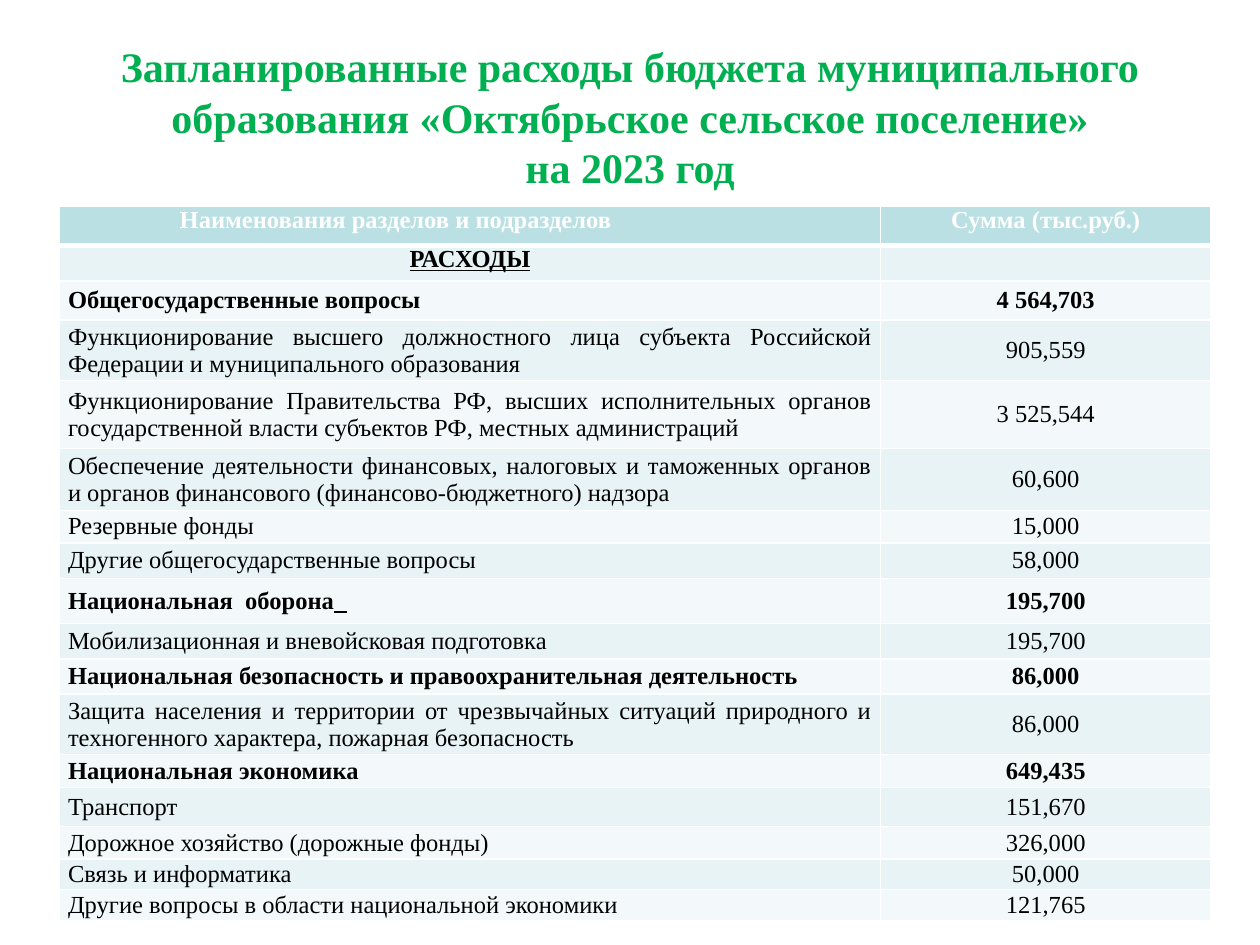
from lxml.etree import SubElement
from pptx import Presentation
from pptx.dml.color import RGBColor
from pptx.enum.text import MSO_ANCHOR, PP_ALIGN
from pptx.oxml.ns import qn
from pptx.util import Inches, Pt

FONT = "Times New Roman"
TITLE = ("Запланированные расходы бюджета муниципального образования "
         "«Октябрьское сельское поселение»", "на 2023 год")
HEADINGS = ("Наименования разделов и подразделов", "Сумма (тыс.руб.)")
GROUP = "РАСХОДЫ"
# name, amount, row height, is a section
EXPENSES = [
    ("Общегосударственные вопросы", "4 564,703", 0.31, True),
    ("Функционирование высшего должностного лица субъекта Российской "
     "Федерации и муниципального образования", "905,559", 0.48, False),
    ("Функционирование Правительства РФ, высших исполнительных органов "
     "государственной власти субъектов РФ, местных администраций",
     "3 525,544", 0.54, False),
    ("Обеспечение деятельности финансовых, налоговых и таможенных органов "
     "и органов финансового (финансово-бюджетного) надзора",
     "60,600", 0.49, False),
    ("Резервные фонды", "15,000", 0.26, False),
    ("Другие общегосударственные вопросы", "58,000", 0.28, False),
    ("Национальная  оборона", "195,700", 0.36, True),
    ("Мобилизационная и вневойсковая подготовка", "195,700", 0.28, False),
    ("Национальная безопасность и правоохранительная деятельность",
     "86,000", 0.28, True),
    ("Защита населения и территории от чрезвычайных ситуаций природного и "
     "техногенного характера, пожарная безопасность", "86,000", 0.48, False),
    ("Национальная экономика", "649,435", 0.26, True),
    ("Транспорт", "151,670", 0.31, False),
    ("Дорожное хозяйство (дорожные фонды)", "326,000", 0.26, False),
    ("Связь и информатика", "50,000", 0.24, False),
    ("Другие вопросы в области национальной экономики", "121,765", 0.25, False),
]
DEFENCE = "Национальная  оборона"
COLUMN_WIDTHS = (6.52, 2.62)
HEADER_HEIGHT, GROUP_HEIGHT = 0.31, 0.24
HEADER_FILL, BAND_FILLS = "BBE0E3", ("E7F3F4", "F3F9FA")


def color(value):
    return RGBColor.from_string(value)


def add_span(para, text, size, ink, bold=False):
    span = para.add_run()
    span.text = text
    span.font.name = FONT
    span.font.size = Pt(size)
    span.font.bold = bold
    span.font.color.rgb = color(ink)
    return span


def set_borders(cell, bottom_width):
    """Draw white lines on all four sides; call before the fill is set."""
    properties = cell._tc.get_or_add_tcPr()
    for side, width in (("L", 1), ("R", 1), ("T", 1), ("B", bottom_width)):
        line = SubElement(properties, qn(f"a:ln{side}"), w=str(Pt(width)))
        fill = SubElement(line, qn("a:solidFill"))
        SubElement(fill, qn("a:srgbClr"), val="FFFFFF")


def fill_cell(cell, text, fill, align=PP_ALIGN.CENTER, ink="000000",
              bold=True, inset=0.07, anchor=MSO_ANCHOR.MIDDLE, bottom_width=1):
    set_borders(cell, bottom_width)
    cell.fill.solid()
    cell.fill.fore_color.rgb = color(fill)
    cell.margin_left = cell.margin_right = Inches(inset)
    cell.margin_top = cell.margin_bottom = 0
    cell.vertical_anchor = anchor
    para = cell.text_frame.paragraphs[0]
    para.alignment = align
    return add_span(para, text, 14, ink, bold)


deck = Presentation()
deck.slide_width, deck.slide_height = Inches(10), Inches(7.5)
page = deck.slides.add_slide(deck.slide_layouts[5])

title = page.shapes.title
title.left, title.top = Inches(0.5), Inches(0.3)
title.width, title.height = Inches(9), Inches(1.25)
title.text_frame.vertical_anchor = MSO_ANCHOR.MIDDLE
title_para = title.text_frame.paragraphs[0]
title_para.alignment = PP_ALIGN.CENTER
add_span(title_para, TITLE[0], 24, "00B050", True)
title_para.add_line_break()
add_span(title_para, TITLE[1], 24, "00B050", True)

heights = [HEADER_HEIGHT, GROUP_HEIGHT] + [expense[2] for expense in EXPENSES]
table = page.shapes.add_table(
    len(heights), 2, Inches(0.47), Inches(1.64),
    Inches(sum(COLUMN_WIDTHS)), Inches(sum(heights))).table
for column, width in zip(table.columns, COLUMN_WIDTHS):
    column.width = Inches(width)
for row, height in zip(table.rows, heights):
    row.height = Inches(height)

for index, heading in enumerate(HEADINGS):
    fill_cell(table.cell(0, index), heading, HEADER_FILL, ink="FFFFFF",
              inset=0.04, anchor=MSO_ANCHOR.TOP, bottom_width=3)
table.cell(0, 0).margin_right = Inches(1.22)

for index, text in enumerate((GROUP, "")):
    span = fill_cell(table.cell(1, index), text, BAND_FILLS[0],
                     inset=0.04, anchor=MSO_ANCHOR.TOP)
    span.font.underline = True

for index, (name, amount, _, section) in enumerate(EXPENSES, start=2):
    fill = BAND_FILLS[(index - 1) % 2]
    name_cell = table.cell(index, 0)
    fill_cell(name_cell, name, fill, PP_ALIGN.JUSTIFY, bold=section)
    fill_cell(table.cell(index, 1), amount, fill, bold=section)
    if name == DEFENCE:
        para = name_cell.text_frame.paragraphs[0]
        para.alignment = PP_ALIGN.LEFT
        tail = add_span(para, "  ", 14, "000000")
        tail.font.italic = tail.font.underline = True

deck.save("out.pptx")
